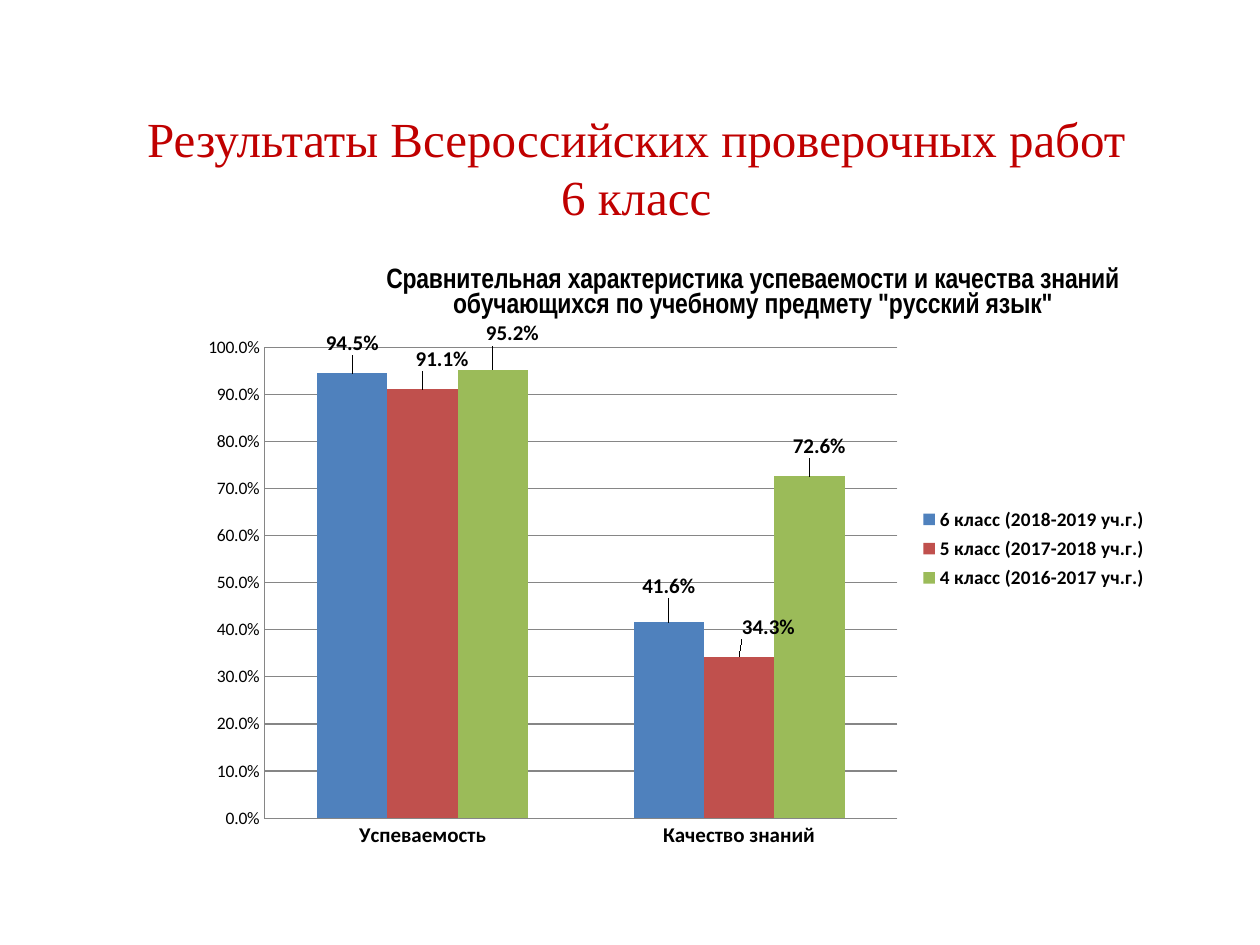
"""Build a slide with a chart of Russian language test results."""
import pptx
import pptx.util
import pptx.chart.data
import pptx.dml.color
import pptx.enum.chart
import pptx.enum.text
import pptx.oxml

RGB = pptx.dml.color.RGBColor
RED, BLACK, GREY = RGB(192, 0, 0), RGB(0, 0, 0), RGB(134, 134, 134)
WIDE, HIGH = 10, 7.5
TITLE = "Результаты Всероссийских проверочных работ\v6 класс"
HEAD = ("Сравнительная характеристика успеваемости и качества знаний "
        "обучающихся по учебному предмету \"русский язык\"")
CATS = ["Успеваемость", "Качество знаний"]
ROWS = [
    ("6 класс (2018-2019 уч.г.)", (0.945, 0.416), RGB(79, 129, 189),
     ((0, -0.02), (0, -0.03))),
    ("5 класс (2017-2018 уч.г.)", (0.911, 0.343), RGB(192, 80, 77),
     ((0.02, -0.02), (0.03, -0.02))),
    ("4 класс (2016-2017 уч.г.)", (0.952, 0.726), RGB(155, 187, 89),
     ((0.02, -0.03), (0.01, -0.02))),
]
PCT = "0.0%"
NS = "http://schemas.openxmlformats.org/drawingml/2006/chart"


def style(font, size, bold=False, name="Calibri", color=BLACK):
    """Format a font."""
    font.size, font.bold, font.name = pptx.util.Pt(size), bold, name
    font.color.rgb = color


def write(frame, text, **look):
    """Put centred text in a frame."""
    frame.text = text
    para = frame.paragraphs[0]
    para.alignment = pptx.enum.text.PP_ALIGN.CENTER
    for run in para.runs:
        style(run.font, **look)


def layout(**parts):
    """Make a manual layout element."""
    body = "".join(f'<c:{key} val="{val}"/>' for key, val in parts.items())
    return pptx.oxml.parse_xml(
        f'<c:layout xmlns:c="{NS}"><c:manualLayout>{body}'
        '</c:manualLayout></c:layout>')


def place(item, after, **parts):
    """Set the layout of a chart part, after a given child."""
    for old in item.xpath("c:layout"):
        item.remove(old)
    if after:
        item.xpath(after)[-1].addnext(layout(**parts))
    else:
        item.insert(0, layout(**parts))


def plot(slide):
    """Add the column chart."""
    data = pptx.chart.data.CategoryChartData(number_format=PCT)
    data.categories = CATS
    for name, vals, *_ in ROWS:
        data.add_series(name, vals)
    box = [pptx.util.Inches(n) for n in (1.48, 1.87, 7.73, 4.92)]
    kinds = pptx.enum.chart
    chart = slide.shapes.add_chart(
        kinds.XL_CHART_TYPE.COLUMN_CLUSTERED, *box, data).chart
    style(chart.font, 10)
    write(chart.chart_title.text_frame, HEAD, size=16, bold=True,
          name="Arial Narrow")
    edge = {"xMode": "edge", "yMode": "edge"}
    place(chart.chart_title._element, "c:tx", **edge, x=0.2, y=0.04)
    chart.has_legend = True
    chart.legend.position = kinds.XL_LEGEND_POSITION.RIGHT
    chart.legend.include_in_layout = False
    style(chart.legend.font, 11, True)
    place(chart.legend._element, "c:legendPos", **edge,
          x=0.75, y=0.43, w=0.24, h=0.15)
    area = chart._chartSpace.xpath("c:chart/c:plotArea")[0]
    place(area, None, layoutTarget="inner", **edge,
          x=0.08, y=0.18, w=0.65, h=0.76)
    for axis in (chart.category_axis, chart.value_axis):
        axis.major_tick_mark = kinds.XL_TICK_MARK.NONE
        axis.format.line.color.rgb = GREY
    style(chart.category_axis.tick_labels.font, 12, True)
    scale = chart.value_axis
    style(scale.tick_labels.font, 10)
    scale.minimum_scale, scale.maximum_scale, scale.major_unit = 0, 1, 0.1
    scale.major_gridlines.format.line.color.rgb = GREY
    scale.tick_labels.number_format = PCT
    scale.tick_labels.number_format_is_linked = False
    bars = chart.plots[0]
    bars.gap_width, bars.overlap, bars.vary_by_categories = 150, 0, False
    for series, (_, _, color, shifts) in zip(bars.series, ROWS):
        series.format.fill.solid()
        series.format.fill.fore_color.rgb = color
        marks = series.data_labels
        marks.show_value = True
        marks.number_format, marks.number_format_is_linked = PCT, False
        style(marks.font, 12, True)
        for i, (x, y) in enumerate(shifts):
            label = series.points[i].data_label
            label.position = kinds.XL_LABEL_POSITION.OUTSIDE_END
            style(label.font, 12, True)
            item = series._element.xpath("c:dLbls/c:dLbl")[i]
            place(item, "c:idx", x=x, y=y)


def main():
    """Build and save the slide."""
    deck = pptx.Presentation()
    deck.slide_width = pptx.util.Inches(WIDE)
    deck.slide_height = pptx.util.Inches(HIGH)
    slide = deck.slides.add_slide(deck.slide_layouts[5])
    title = slide.shapes.title
    title.left, title.top, title.width, title.height = [
        pptx.util.Inches(n) for n in (0.55, 0.7, 9, 1.25)]
    title.text_frame.vertical_anchor = pptx.enum.text.MSO_ANCHOR.MIDDLE
    write(title.text_frame, TITLE, size=28, name="Times New Roman", color=RED)
    plot(slide)
    deck.save("out.pptx")


if __name__ == "__main__":
    main()
